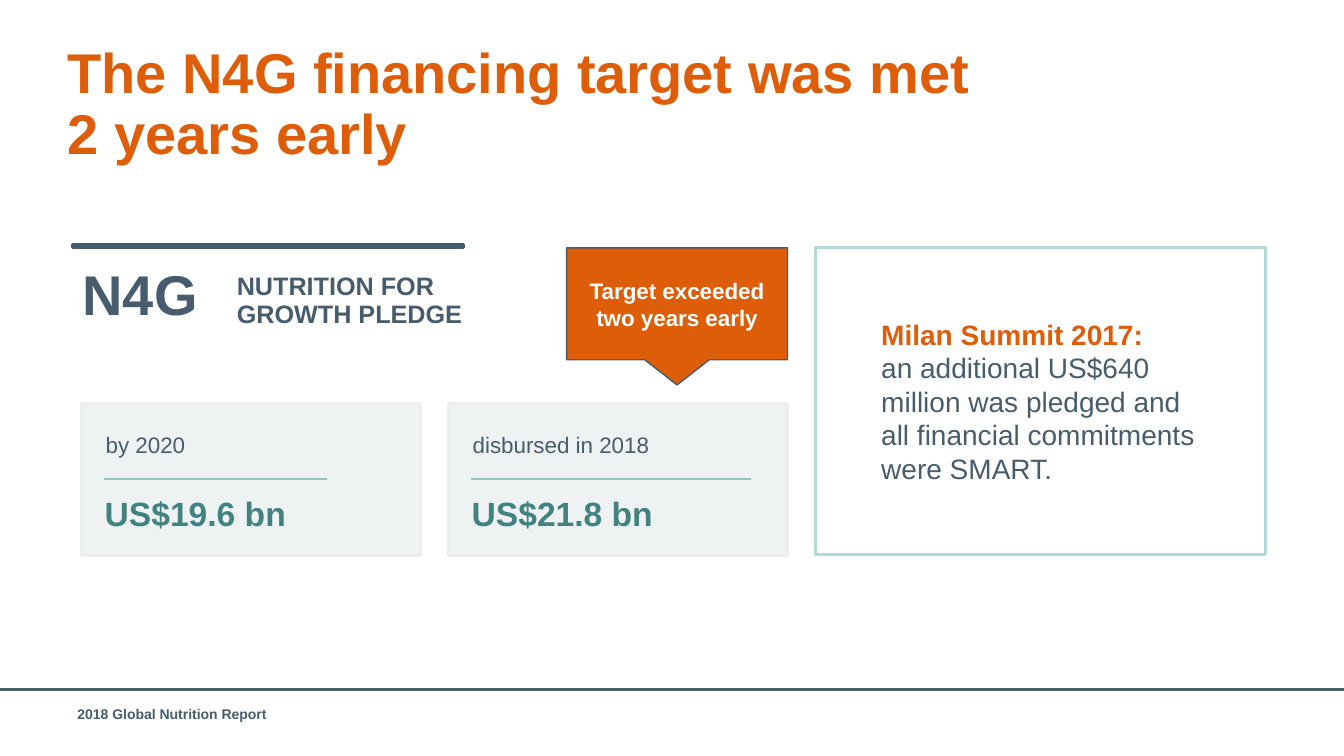
from lxml.etree import SubElement
from pptx import Presentation
from pptx.dml.color import RGBColor
from pptx.enum.shapes import MSO_CONNECTOR, MSO_SHAPE
from pptx.enum.text import MSO_ANCHOR, PP_ALIGN
from pptx.oxml.ns import qn
from pptx.util import Inches, Pt

COLORS = {
    "orange": "DE5D09", "slate": "475C6D", "teal": "428381", "rule": "8EC7C6",
    "frame": "B2D8D7", "card": "ECEFF1", "white": "FFFFFF",
}


def rgb(name):
    return RGBColor.from_string(COLORS[name])


def style_paragraph(p, size, color, bold=False, spacing=None):
    p.line_spacing = spacing
    for r in p.runs:
        r.font.name = "Arial"
        r.font.size = Pt(size)
        r.font.bold = bold
        r.font.color.rgb = rgb(color)


def add_text(s, x, y, w, h, text, size, color, bold=False, spacing=None, inset=None):
    box = s.shapes.add_textbox(Inches(x), Inches(y), Inches(w), Inches(h))
    tf = box.text_frame
    tf.word_wrap = True
    if inset is not None:
        tf.margin_left = tf.margin_top = tf.margin_right = tf.margin_bottom = Inches(inset)
    tf.text = text
    style_paragraph(tf.paragraphs[0], size, color, bold, spacing)


def style_shape(sp, fill, line, width):
    sp.shadow.inherit = False
    if fill:
        sp.fill.solid()
        sp.fill.fore_color.rgb = rgb(fill)
    else:
        sp.fill.background()
    sp.line.color.rgb = rgb(line)
    sp.line.width = Pt(width)


def add_rect(s, x, y, w, h, fill, line, width):
    sp = s.shapes.add_shape(MSO_SHAPE.RECTANGLE, Inches(x), Inches(y), Inches(w), Inches(h))
    style_shape(sp, fill, line, width)
    return sp


def add_rule(s, x, y, w, color, width):
    """Draw a horizontal line without a shadow."""
    line = s.shapes.add_connector(
        MSO_CONNECTOR.STRAIGHT, Inches(x), Inches(y), Inches(x + w), Inches(y))
    line.line.color.rgb = rgb(color)
    line.line.width = Pt(width)
    SubElement(line._element.spPr, qn("a:effectLst"))


def add_footer(s, y):
    add_rule(s, 0, y, 13.33, "slate", 2)
    add_text(s, 0.67, y + 0.11, 9.6, 0.4, "2018 Global Nutrition Report", 10, "slate", True)


def add_pledge_heading(s, x, y):
    add_rect(s, x, y, 3.88, 0.03, "orange", "slate", 2)
    add_text(s, x, y + 0.1, 1.5, 0.77, "N4G", 40, "slate", True)
    add_text(s, x + 1.53, y + 0.24, 2.48, 0.65, "NUTRITION FOR GROWTH PLEDGE",
             18, "slate", True, 0.9)


def add_amount_card(s, x, y, w, h, label, amount, rule_w):
    card = add_rect(s, x, y, w, h, "card", "card", 2)
    color = card._element.spPr.find(qn("a:solidFill"))[0]
    SubElement(color, qn("a:alpha"), val="80000")
    add_text(s, x + 0.14, y + 0.23, w - 0.3, 0.37, label, 16, "slate")
    add_rule(s, x + 0.22, y + 0.75, rule_w, "rule", 1.5)
    add_text(s, x + 0.13, y + 0.89, w - 0.3, 0.46, amount, 24, "teal", True, 0.9)


def add_callout(s, x, y, w, h, lines):
    """Draw a box whose bottom edge carries a centred pointer."""
    tip, half, mid = 0.25, 0.32, x + w / 2
    body = y + h - tip
    outline = s.shapes.build_freeform(Inches(x), Inches(y))
    points = [(x + w, y), (x + w, body), (mid + half, body), (mid, y + h),
              (mid - half, body), (x, body)]
    outline.add_line_segments([(Inches(px), Inches(py)) for px, py in points])
    sp = outline.convert_to_shape()
    style_shape(sp, "orange", "slate", 1)
    tf = sp.text_frame
    tf.word_wrap = True
    tf.vertical_anchor = MSO_ANCHOR.MIDDLE
    tf.margin_top, tf.margin_bottom = 0, Inches(tip)
    tf.text = "\n".join(lines)
    for p in tf.paragraphs:
        p.alignment = PP_ALIGN.CENTER
        style_paragraph(p, 16, "white", True)


def add_summit_panel(s, x, y, w, h, heading, body):
    tf = add_rect(s, x, y, w, h, None, "frame", 2.25).text_frame
    tf.word_wrap = True
    tf.vertical_anchor = MSO_ANCHOR.MIDDLE
    tf.margin_left, tf.margin_right = Inches(0.65), Inches(0.6)
    tf.text = f"{heading}\n{body}"
    for p, color, bold in zip(tf.paragraphs, ("orange", "slate"), (True, False)):
        p.alignment = PP_ALIGN.LEFT
        style_paragraph(p, 20, color, bold)


def main():
    prs = Presentation()
    prs.slide_width, prs.slide_height = Inches(13.33), Inches(7.5)
    s = prs.slides.add_slide(prs.slide_layouts[6])

    add_footer(s, 6.84)
    add_text(s, 0.67, 0.45, 9.3, 1.2, "The N4G financing target was met 2 years early",
             40, "orange", True, 0.9, inset=0)
    add_pledge_heading(s, 0.72, 2.43)
    cards = [("by 2020", "US$19.6 bn", 2.21), ("disbursed in 2018", "US$21.8 bn", 2.78)]
    for i, (label, amount, rule_w) in enumerate(cards):
        add_amount_card(s, 0.81 + i * 3.64, 4, 3.36, 1.51, label, amount, rule_w)
    add_callout(s, 5.62, 2.46, 2.19, 1.36, ["Target exceeded", "two years early"])
    add_summit_panel(
        s, 8.09, 2.46, 4.46, 3.04, "Milan Summit 2017:",
        "an additional US$640 million was pledged and all financial commitments were SMART.")
    prs.save("out.pptx")


if __name__ == "__main__":
    main()
